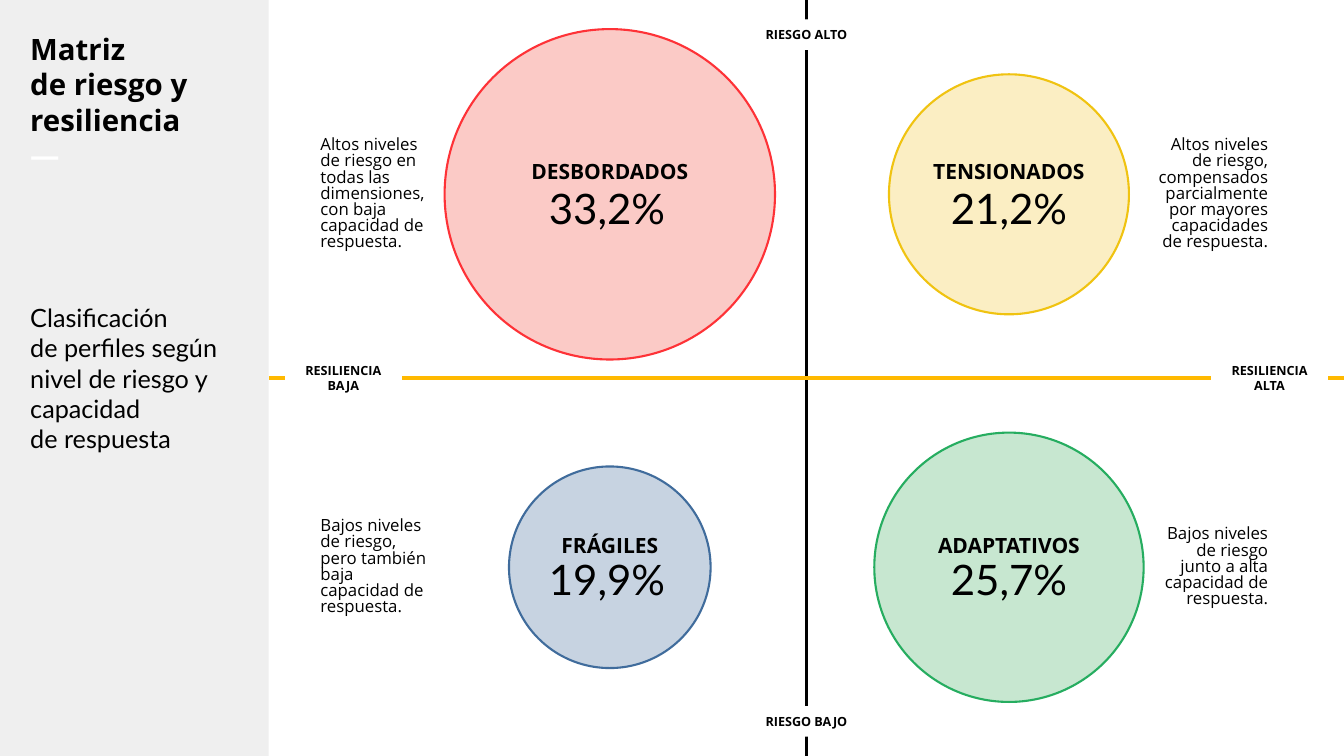
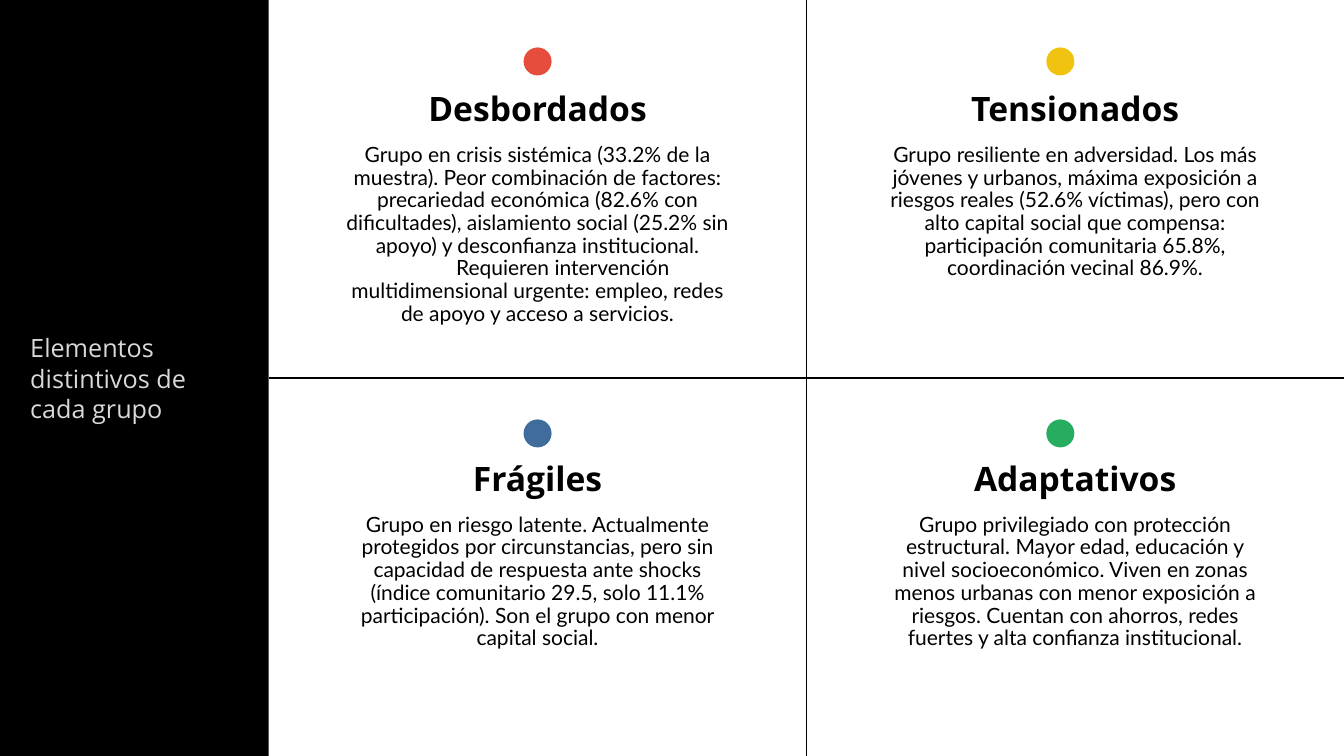
from lxml import etree
from pptx import Presentation
from pptx.dml.color import RGBColor
from pptx.enum.shapes import MSO_CONNECTOR as Connector, MSO_SHAPE as Preset
from pptx.enum.text import MSO_ANCHOR as Anchor, MSO_AUTO_SIZE as AutoSize, PP_ALIGN as Align
from pptx.oxml.ns import qn
from pptx.util import Pt

COLORS = {
    "ink": "000000", "paper": "FFFFFF", "gray": "EFEFEF", "silver": "D9D9D9", "amber": "FFB900",
    "red": "E74D3D", "bright_red": "FE3237", "yellow": "F0C311", "blue": "406C9C", "green": "26AD60",
    "pale_red": "FBCAC6", "pale_yellow": "FBEEC3", "pale_blue": "C7D3E1", "pale_green": "C7E7D0",
}
HEAD, TEXT = "Open Sans", "Lato"
WIDTH, HEIGHT = 960, 540
PANEL_WIDTH = WIDTH / 5
AXIS_X, AXIS_Y = 576, HEIGHT / 2
HEADING_BOX = (12.2, 229.7, 154.8, 80.6)

MATRIX_TITLE = "Matriz\nde riesgo y resiliencia"
MATRIX_SUBTITLE = "Clasificación\nde perfiles según nivel de riesgo y capacidad\nde respuesta"
GROUPS_TITLE = "Elementos distintivos de cada grupo"

AXIS_LABELS = [
    ("RIESGO ALTO", AXIS_X, 24.8, 126, Preset.ROUNDED_RECTANGLE),
    ("RIESGO BAJO", AXIS_X, 515.2, 126, Preset.ROUNDED_RECTANGLE),
    ("RESILIENCIA BAJA", 245.2, AXIS_Y, 82.8, Preset.RECTANGLE),
    ("RESILIENCIA ALTA", 906.8, AXIS_Y, 82.8, Preset.RECTANGLE),
]

PROFILES = [
    {"name": "Desbordados", "share": "33,2%", "size": 236,
     "fill": "pale_red", "ring": "bright_red", "dot": "red",
     "summary": "Altos niveles de riesgo en todas las dimensiones, con baja capacidad de respuesta.",
     "detail": ["Grupo en crisis sistémica (33.2% de la muestra). Peor combinación de factores: "
                "precariedad económica (82.6% con dificultades), aislamiento social (25.2% sin apoyo) "
                "y desconfianza institucional.",
                "Requieren intervención multidimensional urgente: empleo, redes de apoyo y acceso "
                "a servicios."]},
    {"name": "Tensionados", "share": "21,2%", "size": 171.4,
     "fill": "pale_yellow", "ring": "yellow", "dot": "yellow",
     "summary": "Altos niveles de riesgo, compensados parcialmente por mayores capacidades de respuesta.",
     "detail": ["Grupo resiliente en adversidad. Los más jóvenes y urbanos, máxima exposición a riesgos "
                "reales (52.6% víctimas), pero con alto capital social que compensa: participación "
                "comunitaria 65.8%, coordinación vecinal 86.9%."]},
    {"name": "Frágiles", "share": "19,9%", "size": 144,
     "fill": "pale_blue", "ring": "blue", "dot": "blue",
     "summary": "Bajos niveles de riesgo, pero también baja capacidad de respuesta.",
     "detail": ["Grupo en riesgo latente. Actualmente protegidos por circunstancias, pero sin capacidad "
                "de respuesta ante shocks (índice comunitario 29.5, solo 11.1% participación). Son el "
                "grupo con menor capital social."]},
    {"name": "Adaptativos", "share": "25,7%", "size": 192.4,
     "fill": "pale_green", "ring": "green", "dot": "green",
     "summary": "Bajos niveles de riesgo junto a alta capacidad de respuesta.",
     "detail": ["Grupo privilegiado con protección estructural. Mayor edad, educación y nivel "
                "socioeconómico. Viven en zonas menos urbanas con menor exposición a riesgos. Cuentan "
                "con ahorros, redes fuertes y alta confianza institucional."]},
]

MATRIX_COLUMNS = [
    {"center": 435.6, "share": 433.6, "summary": 221.8, "align": Align.LEFT},
    {"center": 720.7, "share": 720.7, "summary": 816.5, "align": Align.RIGHT},
]
MATRIX_ROWS = [
    {"center": 138.8, "name": 103, "share": 130.3},
    {"center": 405.2, "name": 370.8, "share": 395.3},
]
GROUP_COLUMNS = [{"center": 384, "dot": 384}, {"center": 768, "dot": 757.4}]
GROUP_ROWS = [
    {"dot": 43.9, "name": 51.1, "detail": 95.8},
    {"dot": 309.6, "name": 315.4, "detail": 360},
]


def rgb(color):
    return RGBColor.from_string(COLORS[color])


def place(shape, box):
    shape.left, shape.top, shape.width, shape.height = (Pt(value) for value in box)


def around(x, y, width, height):
    return x - width / 2, y - height / 2, width, height


def write(shape, texts, size, font, color="ink", bold=False, align=Align.CENTER,
          spacing=1, anchor=Anchor.TOP, inset=7.2):
    frame = shape.text_frame
    frame.word_wrap = True
    frame.auto_size = AutoSize.NONE
    frame.vertical_anchor = anchor
    frame.margin_left = frame.margin_top = frame.margin_right = frame.margin_bottom = Pt(inset)
    for number, text in enumerate(texts):
        paragraph = frame.add_paragraph() if number else frame.paragraphs[0]
        paragraph.text = text
        paragraph.alignment = align
        paragraph.line_spacing = spacing
        paragraph.space_before = Pt(0)
        properties = paragraph._p.get_or_add_pPr()
        properties.set("marL", "0")
        properties.set("indent", str(Pt(36) if number and align == Align.CENTER else 0))
        etree.SubElement(properties, qn("a:buNone"))
        paragraph.font.size = Pt(size)
        paragraph.font.name = font
        paragraph.font.bold = bold
        paragraph.font.color.rgb = rgb(color)
    return frame


def add_text(slide, box, texts, size, font, **style):
    return write(slide.shapes.add_textbox(*(Pt(value) for value in box)), texts, size, font, **style)


def add_shape(slide, preset, box, fill, ring=None, ring_width=1.5):
    shape = slide.shapes.add_shape(preset, *(Pt(value) for value in box))
    shape.shadow.inherit = False
    shape.fill.solid()
    shape.fill.fore_color.rgb = rgb(fill)
    if ring:
        shape.line.color.rgb = rgb(ring)
        shape.line.width = Pt(ring_width)
    else:
        shape.line.fill.background()
    return shape


def add_axis(slide, start, end, color, width):
    axis = slide.shapes.add_connector(Connector.STRAIGHT, *(Pt(value) for value in start + end))
    axis.line.color.rgb = rgb(color)
    axis.line.width = Pt(width)
    etree.SubElement(axis.element.spPr, qn("a:effectLst"))
    return axis


def add_frame(prs, layout, panel_color, horizontal_color, axis_width):
    slide = prs.slides.add_slide(prs.slide_layouts[layout])
    panel = add_shape(slide, Preset.RECTANGLE, (0, 0, PANEL_WIDTH, HEIGHT), panel_color)
    slide.shapes.title.element.addprevious(panel.element)
    add_axis(slide, (AXIS_X, HEIGHT), (AXIS_X, 0), "ink", axis_width)
    horizontal = add_axis(slide, (PANEL_WIDTH, AXIS_Y), (WIDTH, AXIS_Y), horizontal_color, axis_width)
    horizontal.begin_connect(panel, 3)
    return slide


def write_heading(shape, box, texts, size, font, **style):
    place(shape, box)
    return write(shape, texts, size, font, align=Align.LEFT, anchor=Anchor.MIDDLE, inset=9.4, **style)


def quadrants(columns, rows):
    for number, profile in enumerate(PROFILES):
        yield profile, columns[number % 2], rows[number // 2]


def build_matrix(prs):
    slide = add_frame(prs, 1, "gray", "amber", 2.25)
    title = write_heading(slide.shapes.title, (12.2, 14.4, 136.8, 116.6), [MATRIX_TITLE, "—"],
                          21, HEAD, bold=True)
    title.paragraphs[1].font.color.rgb = rgb("paper")
    write_heading(slide.placeholders[1], HEADING_BOX, [MATRIX_SUBTITLE], 18, TEXT)
    for label, x, y, width, preset in AXIS_LABELS:
        plate = add_shape(slide, preset, around(x, y, width, 21), "paper", "paper", 0.75)
        if preset == Preset.ROUNDED_RECTANGLE:
            plate.adjustments[0] = 0.5
        write(plate, [label], 9, HEAD, bold=True, anchor=Anchor.MIDDLE)
    for profile, column, row in quadrants(MATRIX_COLUMNS, MATRIX_ROWS):
        size = profile["size"]
        add_shape(slide, Preset.OVAL, around(column["center"], row["center"], size, size),
                  profile["fill"], profile["ring"])
        add_text(slide, (column["center"] - 118, row["name"], 236, 32.4), [profile["name"].upper()],
                 15, HEAD, bold=True, spacing=1.15)
        add_text(slide, (column["share"] - 85.7, row["share"], 171.4, 44), [profile["share"]],
                 30, TEXT, spacing=0.8)
        add_text(slide, (column["summary"], row["center"] - 48, 96.5, 96), [profile["summary"]],
                 12, HEAD, spacing=0.8, align=column["align"], anchor=Anchor.MIDDLE)


def build_groups(prs):
    slide = add_frame(prs, 5, "ink", "ink", 0.75)
    write_heading(slide.shapes.title, HEADING_BOX, [GROUPS_TITLE], 18, HEAD, color="silver")
    for profile, column, row in quadrants(GROUP_COLUMNS, GROUP_ROWS):
        add_shape(slide, Preset.OVAL, around(column["dot"], row["dot"], 20, 20), profile["dot"])
        add_text(slide, (column["center"] - 118, row["name"], 236, 44), [profile["name"]],
                 24, HEAD, bold=True, spacing=1.15)
        add_text(slide, (column["center"] - 144, row["detail"], 288, 145), profile["detail"],
                 15, TEXT, spacing=0.9)


def main():
    prs = Presentation()
    prs.slide_width, prs.slide_height = Pt(WIDTH), Pt(HEIGHT)
    build_matrix(prs)
    build_groups(prs)
    prs.save("out.pptx")


if __name__ == "__main__":
    main()
